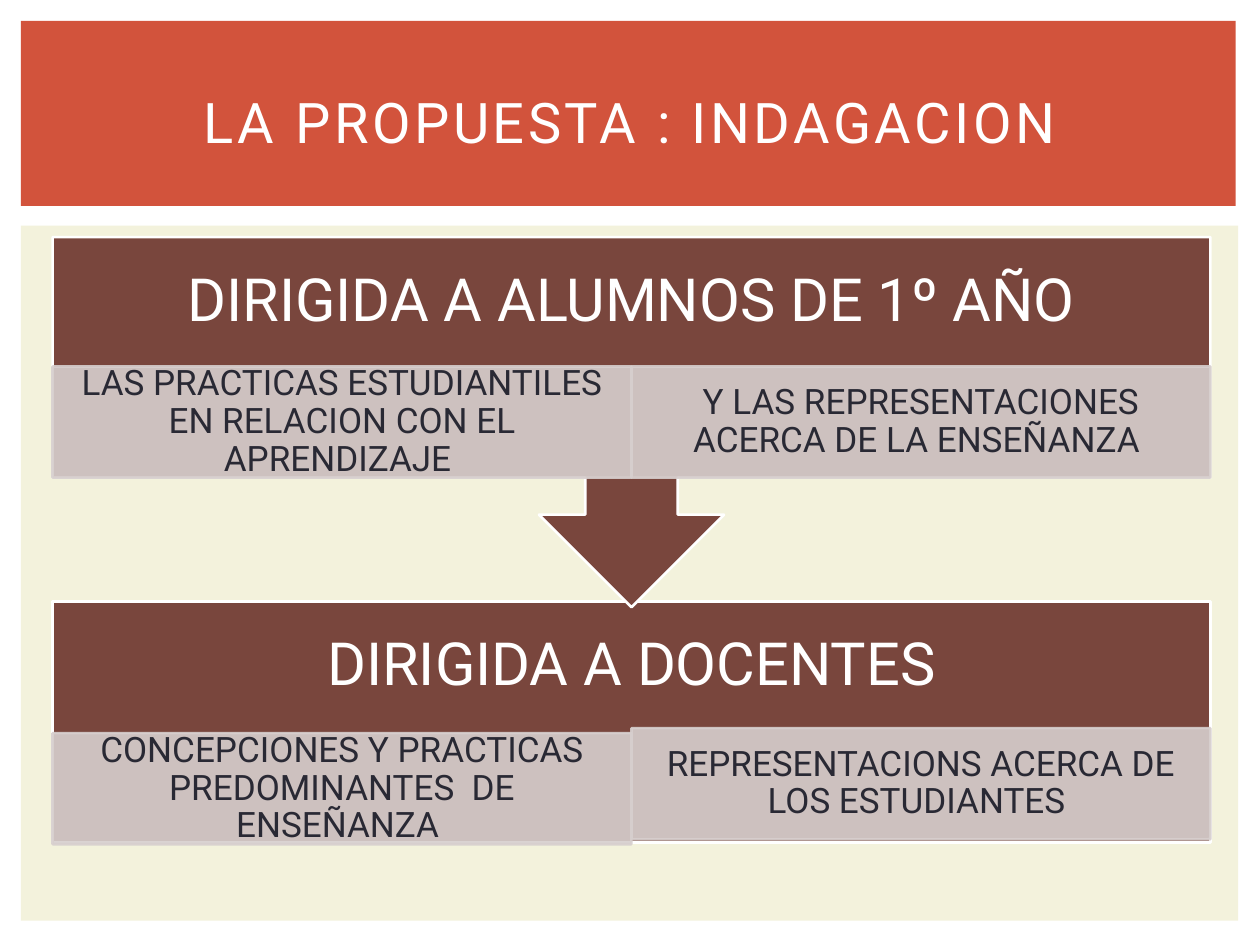
from lxml.etree import SubElement
from pptx import Presentation
from pptx.dml.color import RGBColor
from pptx.enum.shapes import MSO_SHAPE as Shape
from pptx.enum.text import MSO_ANCHOR as Anchor, MSO_AUTO_SIZE as AutoSize, PP_ALIGN as Align
from pptx.oxml.ns import qn
from pptx.util import Cm, Pt

FONT = "Roboto"
WHITE, RED, CREAM, BROWN, PALE, INK = "FFFFFF", "D2533C", "F3F2DC", "79463D", "D7CFCE", "292934"
LEFT, WIDTH = 1.06, 23.34
HEADING_HEIGHT, DETAIL_HEIGHT = 2.62, 2.24


def color(value):
    return RGBColor.from_string(value)


def set_alpha(fill_format, percent):
    """Make a solid fill partly transparent."""
    for node in fill_format._xPr.iter(qn("a:srgbClr")):
        SubElement(node, qn("a:alpha")).set("val", str(percent * 1000))


def add_block(page, kind, area, fill, line=None):
    block = page.shapes.add_shape(kind, *map(Cm, area))
    block.shadow.inherit = False
    block.fill.solid()
    block.fill.fore_color.rgb = color(fill)
    if line:
        block.line.color.rgb = color(line)
        block.line.width = Pt(1.5)
    else:
        block.line.fill.background()
    return block


def write(shape, text, size, text_color, margins, spacing=0.9):
    """Fill a shape with one centred paragraph; margins are horizontal, vertical."""
    frame = shape.text_frame
    frame.text = text
    frame.word_wrap = True
    frame.auto_size = AutoSize.NONE
    frame.vertical_anchor = Anchor.MIDDLE
    frame.margin_left = frame.margin_right = Cm(margins[0])
    frame.margin_top = frame.margin_bottom = Cm(margins[1])
    para = frame.paragraphs[0]
    para.alignment = Align.CENTER
    para.line_spacing = spacing
    span = para.runs[0]
    span.font.name = FONT
    span.font.size = Pt(size)
    span.font.color.rgb = color(text_color)
    return span


def add_title(page, text):
    title = page.shapes.title
    title.left, title.top, title.width, title.height = map(Cm, (LEFT, 0.99, 23.29, 2.92))
    span = write(title, text, 32, WHITE, (0.25, 0.13), 1.0)
    span.font._element.set("spc", "200")
    # Bring the title in front of its panel
    page.shapes._spTree.append(title._element)


def add_heading(page, top, text):
    box = page.shapes.add_textbox(*map(Cm, (LEFT, top, WIDTH, HEADING_HEIGHT)))
    write(box, text, 34, WHITE, (0.66, 0.66))


def add_details(page, details):
    """Place the detail boxes side by side, each with its own top."""
    width = WIDTH / len(details)
    for column, (top, text) in enumerate(details):
        area = (LEFT + column * width, top, width, DETAIL_HEIGHT)
        box = add_block(page, Shape.RECTANGLE, area, PALE, PALE)
        set_alpha(box.fill, 90)
        set_alpha(box.line.fill, 90)
        write(box, text, 20, INK, (0.41, 0.08))


def main():
    deck = Presentation()
    deck.slide_width, deck.slide_height = Cm(25.4), Cm(19.05)
    page = deck.slides.add_slide(deck.slide_layouts[5])

    # Background panels
    add_block(page, Shape.RECTANGLE, (0.42, 4.55, 24.54, 14.01), CREAM)
    add_block(page, Shape.RECTANGLE, (0.42, 0.42, 24.49, 3.73), RED)

    # Teachers
    add_block(page, Shape.RECTANGLE, (LEFT, 12.13, WIDTH, 4.85), BROWN, WHITE)
    add_heading(page, 12.13, "DIRIGIDA A DOCENTES")
    add_details(page, [
        (14.78, "CONCEPCIONES Y PRACTICAS PREDOMINANTES  DE ENSEÑANZA "),
        (14.68, "REPRESENTACIONS ACERCA DE LOS ESTUDIANTES "),
    ])

    # Students, with the arrow leading down to the teachers
    callout = add_block(page, Shape.UP_ARROW_CALLOUT, (LEFT, 4.78, WIDTH, 7.46), BROWN, WHITE)
    callout.rotation = 180
    add_heading(page, 4.78, "DIRIGIDA A ALUMNOS DE 1º AÑO")
    add_details(page, [
        (7.39, "LAS PRACTICAS ESTUDIANTILES EN RELACION CON EL APRENDIZAJE "),
        (7.39, "Y LAS REPRESENTACIONES ACERCA DE LA ENSEÑANZA "),
    ])

    add_title(page, "LA PROPUESTA : INDAGACION")
    deck.save("out.pptx")


if __name__ == "__main__":
    main()
